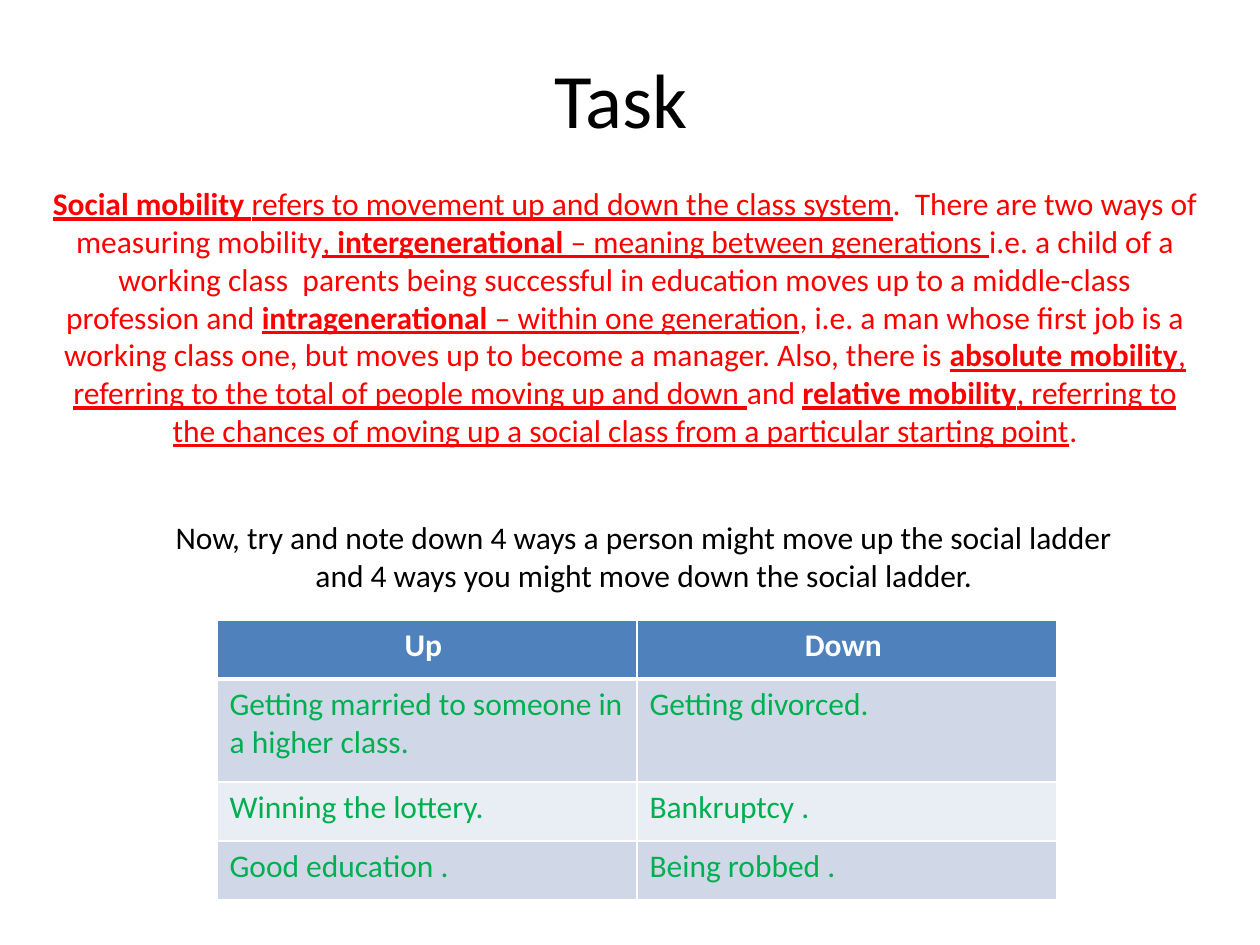
from lxml.etree import SubElement
from pptx import Presentation
from pptx.dml.color import RGBColor
from pptx.enum.text import MSO_ANCHOR as Anchor, PP_ALIGN as Align
from pptx.oxml.ns import qn
from pptx.util import Emu, Pt

PX = 914400 / 126
FONT = "Calibri"
COLORS = {
    "black": "000000",
    "white": "FFFFFF",
    "red": "FF0000",
    "green": "00B050",
    "header": "4F81BD",
    "band_dark": "D0D8E8",
    "band_light": "E9EDF4",
}

# Each span: text, bold, underline
DEFINITIONS = [
    ("Social mobility ", True, True),
    ("refers to movement up and down the class system", False, True),
    (".  There are two ways of measuring mobility", False, False),
    (", ", False, True),
    ("intergenerational", True, True),
    (" – meaning between generations ", False, True),
    ("i.e. a child of a working class  parents being successful in education "
     "moves up to a middle-class profession and ", False, False),
    ("intragenerational ", True, True),
    ("– within one generation", False, True),
    (", i.e. a man whose first job is a working class one, but moves up to "
     "become a manager. Also, there is ", False, False),
    ("absolute mobility", True, True),
    (", referring to the total of people moving up and down ", False, True),
    ("and ", False, False),
    ("relative mobility", True, True),
    (", referring to the chances of moving up a social class from a "
     "particular starting point", False, True),
    (".", False, False),
]
PROMPT = ("Now, try and note down 4 ways a person might move up the social "
          "ladder and 4 ways you might move down the social ladder.")
LADDER = [
    ("Up ", "Down "),
    ("Getting married to someone in a higher class.", "Getting divorced."),
    ("Winning the lottery.", "Bankruptcy ."),
    ("Good education .", "Being robbed ."),
]
ROW_HEIGHTS = [59, 103, 59, 59]


def px(length):
    return Emu(round(length * PX))


def rgb(name):
    return RGBColor.from_string(COLORS[name])


def add_span(para, text, *, size=18, color="black", bold=False, underline=False):
    span = para.add_run()
    span.text = text
    font = span.font
    font.name, font.size = FONT, Pt(size)
    font.bold, font.underline = bold, underline
    font.color.rgb = rgb(color)


def add_text(page, left, top, width, height, spans, *, anchor=Anchor.TOP, **style):
    box = page.shapes.add_textbox(px(left), px(top), px(width), px(height))
    frame = box.text_frame
    frame.word_wrap = True
    frame.vertical_anchor = anchor
    para = frame.paragraphs[0]
    para.alignment = Align.CENTER
    for text, bold, underline in spans:
        add_span(para, text, bold=bold, underline=underline, **style)


def set_borders(cell, widths):
    """Draw white borders; widths maps lnL, lnR, lnT and lnB to points."""
    properties = cell._tc.get_or_add_tcPr()
    for index, (side, points) in enumerate(widths.items()):
        line = SubElement(properties, qn(f"a:{side}"), w=str(Pt(points)))
        fill = SubElement(line, qn("a:solidFill"))
        SubElement(fill, qn("a:srgbClr"), val=COLORS["white"])
        properties.insert(index, line)


def add_ladder_table(page, left, top, width):
    columns = len(LADDER[0])
    table = page.shapes.add_table(len(LADDER), columns, px(left), px(top),
                                  px(width), px(sum(ROW_HEIGHTS))).table
    for column in table.columns:
        column.width = px(width / columns)
    for r, (texts, height) in enumerate(zip(LADDER, ROW_HEIGHTS)):
        table.rows[r].height = px(height)
        header = r == 0
        band = "header" if header else ("band_light", "band_dark")[r % 2]
        for c, text in enumerate(texts):
            cell = table.cell(r, c)
            cell.fill.solid()
            cell.fill.fore_color.rgb = rgb(band)
            set_borders(cell, {"lnL": 1, "lnR": 1,
                               "lnT": 3 if r == 1 else 1,
                               "lnB": 3 if header else 1})
            para = cell.text_frame.paragraphs[0]
            para.alignment = Align.CENTER if header else Align.LEFT
            add_span(para, text, bold=header, color="white" if header else "green")


def main():
    deck = Presentation()
    deck.slide_width, deck.slide_height = px(1260), px(945)
    page = deck.slides.add_slide(deck.slide_layouts[6])

    # Title
    add_text(page, 63, 38, 1134, 120, [("Task ", False, False)],
             size=44, anchor=Anchor.MIDDLE)
    # Definitions and the task
    add_text(page, 39, 178, 1172, 280, DEFINITIONS, color="red")
    add_text(page, 147, 512, 994, 89, [(PROMPT, False, False)])
    # Ways up and down the ladder
    add_ladder_table(page, 217, 620, 840)

    deck.save("out.pptx")


if __name__ == "__main__":
    main()
